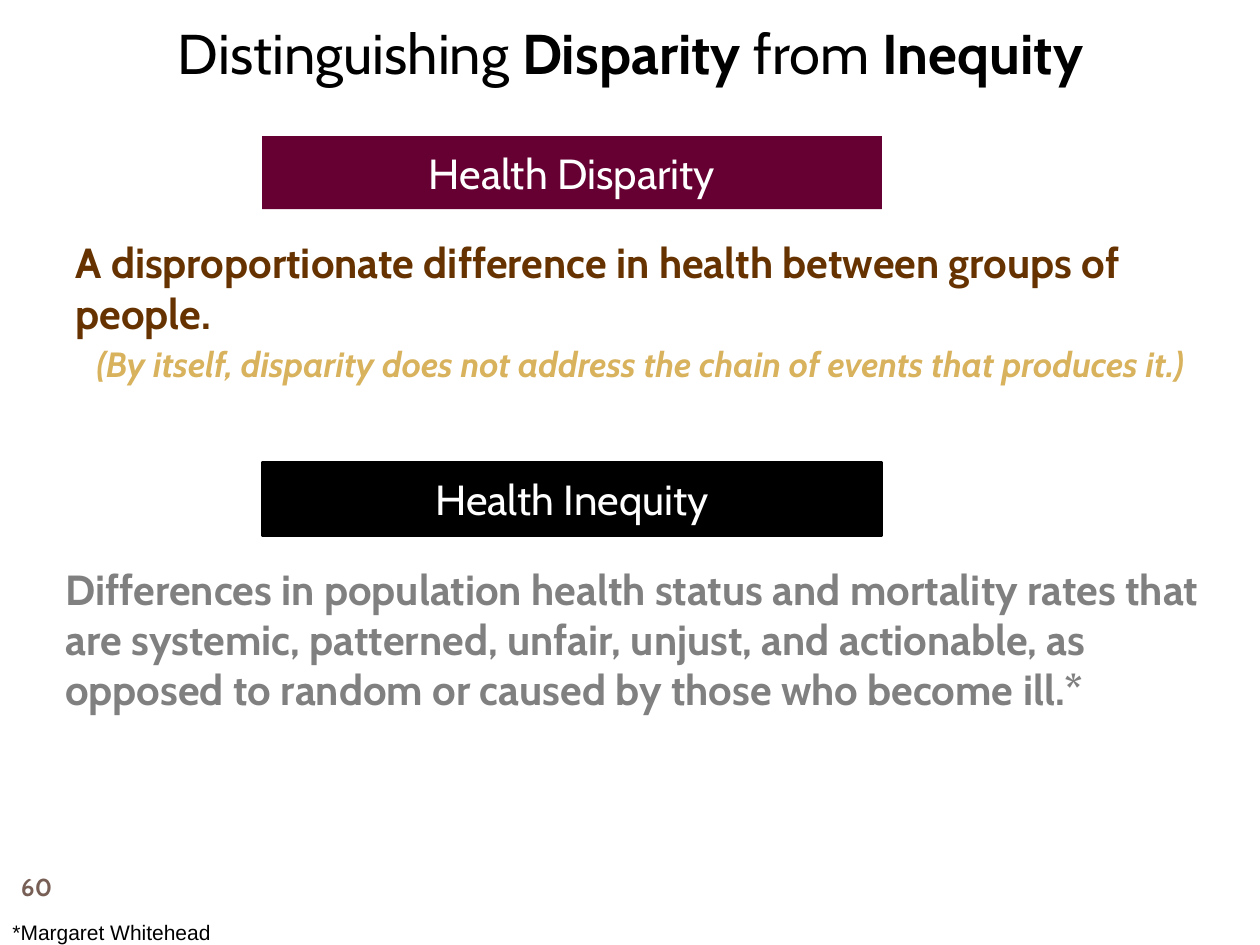
"""Build a slide that distinguishes health disparity from health inequity."""
import dataclasses

import pptx
import pptx.dml.color
import pptx.enum.shapes
import pptx.enum.text
import pptx.util
from pptx.util import Inches

COLORS = {
    "white": "FFFFFF",
    "black": "000000",
    "maroon": "660033",
    "brown": "663300",
    "gold": "D8B25C",
    "gray": "808080",
    "taupe": "775F55",
}
ALIGN = pptx.enum.text.PP_ALIGN
ANCHOR = pptx.enum.text.MSO_ANCHOR


@dataclasses.dataclass(frozen=True)
class Style:
    size: int
    color: str
    bold: bool = False
    italic: bool = False
    font: str = "Cabin"


@dataclasses.dataclass(frozen=True)
class Banner:
    label: str
    top: float
    fill: str
    outlined: bool = False


@dataclasses.dataclass(frozen=True)
class Passage:
    text: str
    box: tuple[float, float, float, float]
    style: Style
    align: ALIGN = ALIGN.LEFT
    anchor: ANCHOR = ANCHOR.TOP


BANNERS = [
    Banner("Health Disparity", 1.08, "maroon"),
    Banner("Health Inequity", 3.67, "black", outlined=True),
]
PASSAGES = [
    Passage(
        "A disproportionate difference in health between groups of people.",
        (0.5, 1.83, 9.17, 0.91),
        Style(24, "brown", bold=True),
    ),
    Passage(
        "(By itself, disparity does not address the chain of events that produces it.)",
        (0.5, 2.67, 9.17, 0.44),
        Style(20, "gold", bold=True, italic=True),
        ALIGN.CENTER,
    ),
    Passage(
        "Differences in population health status and mortality rates that are "
        "systemic, patterned, unfair, unjust, and actionable, as opposed to "
        "random or caused by those who become ill.*",
        (0.42, 4.42, 9.25, 1.72),
        Style(24, "gray", bold=True),
    ),
    Passage("*Margaret Whitehead", (0, 7.25, 8.42, 0.3), Style(12, "black", font="Arial")),
    Passage(
        "60", (0, 6.83, 0.58, 0.42), Style(14, "taupe", bold=True), ALIGN.CENTER, ANCHOR.MIDDLE
    ),
]
TITLE_WORDS = [("Distinguishing ", False), ("Disparity", True), (" from ", False), ("Inequity", True)]


def rgb(name: str) -> pptx.dml.color.RGBColor:
    """Return the named palette colour."""
    return pptx.dml.color.RGBColor.from_string(COLORS[name])


def add_run(paragraph, text: str, style: Style) -> None:
    """Append one styled run to a paragraph."""
    run = paragraph.add_run()
    run.text = text
    run.font.name = style.font
    run.font.size = pptx.util.Pt(style.size)
    run.font.bold = style.bold
    run.font.italic = style.italic
    run.font.color.rgb = rgb(style.color)


def draw_title(slide) -> None:
    """Fill the title placeholder, stressing the two contrasted terms."""
    title = slide.shapes.title
    title.left, title.top = Inches(0.17), Inches(0)
    title.width, title.height = Inches(9.67), Inches(0.83)
    frame = title.text_frame
    frame.auto_size = pptx.enum.text.MSO_AUTO_SIZE.NONE
    frame.vertical_anchor = ANCHOR.MIDDLE
    heading = frame.paragraphs[0]
    heading.alignment = ALIGN.CENTER
    for words, stressed in TITLE_WORDS:
        add_run(heading, words, Style(32, "black", bold=stressed))


def draw_banner(slide, banner: Banner) -> None:
    """Draw the coloured bar that names a term."""
    bar = slide.shapes.add_shape(
        pptx.enum.shapes.MSO_SHAPE.RECTANGLE,
        Inches(2.08), Inches(banner.top), Inches(4.92), Inches(0.58),
    )
    bar.shadow.inherit = False
    bar.fill.solid()
    bar.fill.fore_color.rgb = rgb(banner.fill)
    if banner.outlined:
        bar.line.color.rgb = rgb(banner.fill)
        bar.line.width = pptx.util.Pt(1.5)
    else:
        bar.line.fill.background()
    bar.text_frame.word_wrap = False
    bar.text_frame.vertical_anchor = ANCHOR.MIDDLE
    label = bar.text_frame.paragraphs[0]
    label.alignment = ALIGN.CENTER
    add_run(label, banner.label, Style(24, "white"))


def draw_passage(slide, passage: Passage) -> None:
    """Draw one wrapped block of text."""
    frame = slide.shapes.add_textbox(*map(Inches, passage.box)).text_frame
    frame.word_wrap = True
    frame.vertical_anchor = passage.anchor
    paragraph = frame.paragraphs[0]
    paragraph.alignment = passage.align
    add_run(paragraph, passage.text, passage.style)


def main() -> None:
    """Assemble and save the slide."""
    deck = pptx.Presentation()
    deck.slide_width, deck.slide_height = Inches(10), Inches(7.5)
    slide = deck.slides.add_slide(deck.slide_layouts.get_by_name("Title Only"))
    draw_title(slide)
    for banner in BANNERS:
        draw_banner(slide, banner)
    for passage in PASSAGES:
        draw_passage(slide, passage)
    deck.save("out.pptx")


if __name__ == "__main__":
    main()
